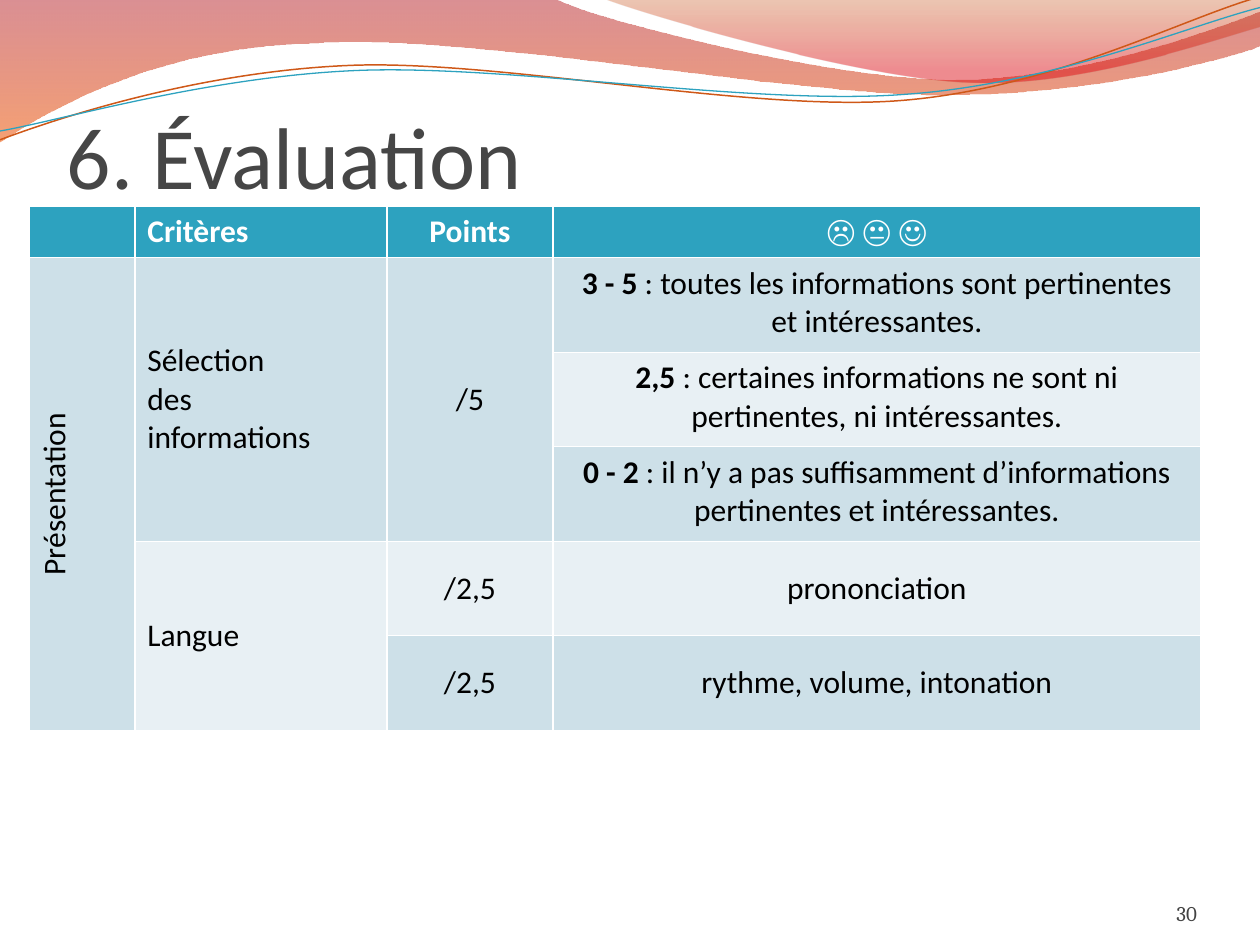
from lxml.etree import SubElement
from pptx import Presentation
from pptx.dml.color import RGBColor
from pptx.enum.text import MSO_ANCHOR, MSO_AUTO_SIZE, PP_ALIGN
from pptx.oxml.ns import qn
from pptx.util import Inches, Pt

COLORS = {
    "white": "FFFFFF", "black": "000000", "title": "464646", "number": "434343",
    "header": "2DA2BF", "band": "CDE0E8", "pale": "E8F0F4", "orange": "CF5818",
    "crimson": "AF0911", "amber": "EE5300", "rust": "C24400", "red": "DC000B",
}
CENTER, LEFT, RIGHT = PP_ALIGN.CENTER, PP_ALIGN.LEFT, PP_ALIGN.RIGHT

# Wave outlines: a two-number item is a corner, a six-number item a Bezier curve
LARGE_WAVE = [
    (0, 0), (4.4, -0.01), (4.76, 0.17, 6.64, 0.63, 7.58, 0.63),
    (8.53, 0.63, 9.58, 0.26, 10, 0.09), (10.01, 0.36),
    (9.83, 0.44, 8.7, 0.76, 7.46, 0.75), (6.22, 0.75, 3.82, 0.28, 2.57, 0.34),
    (1.29, 0.36, 0.46, 0.83, -0.01, 1.13), (0, 0),
]
SMALL_WAVE = [
    (4.79, -0.01), (5.09, 0.11, 6.82, 0.62, 7.69, 0.65),
    (8.56, 0.69, 9.61, 0.32, 10, 0.21), (10, 0), (4.79, -0.01),
]
ORANGE_LINE = [
    (0, 1.11), (0.48, 0.93, 1.58, 0.57, 2.77, 0.52),
    (3.95, 0.47, 5.93, 0.89, 7.13, 0.8), (8.33, 0.71, 9.38, 0.15, 9.98, -0.02),
]
BLUE_LINE = [
    (0, 1.04), (0.47, 0.96, 1.64, 0.61, 2.83, 0.56),
    (4.03, 0.51, 5.97, 0.84, 7.17, 0.75), (8.36, 0.67, 9.41, 0.21, 10, 0.06),
]

# Table content: (row, column, rows spanned, alignment, runs as (text, bold))
COLUMN_WIDTHS = [0.84, 2, 1.32, 5.14]
ROW_HEIGHTS = [0.4] + [0.75] * 5
CELLS = [
    (0, 1, 1, LEFT, [("Critères", True)]),
    (0, 2, 1, CENTER, [("Points", True)]),
    (0, 3, 1, CENTER, [("☹ 😐 ", True), ("☺", True, "Cambria")]),
    (1, 0, 5, CENTER, [("Présentation", False)]),
    (1, 1, 3, LEFT, [("Sélection\ndes\ninformations", False)]),
    (1, 2, 3, CENTER, [("/5", False)]),
    (1, 3, 1, CENTER, [("3 - 5", True), (
        " : toutes les informations sont pertinentes et intéressantes.", False)]),
    (2, 3, 1, CENTER, [("2,5 ", True), (
        ": certaines informations ne sont ni pertinentes, ni intéressantes.", False)]),
    (3, 3, 1, CENTER, [("0 - 2", True), (
        " : il n’y a pas suffisamment d’informations pertinentes et intéressantes.", False)]),
    (4, 1, 2, LEFT, [("Langue", False)]),
    (4, 2, 1, CENTER, [("/2,5", False)]),
    (4, 3, 1, CENTER, [("prononciation", False)]),
    (5, 2, 1, CENTER, [("/2,5", False)]),
    (5, 3, 1, CENTER, [("rythme, volume, intonation", False)]),
]


def color(name):
    return RGBColor.from_string(COLORS[name])


def apply_format(target, values):
    for name, value in values.items():
        setattr(target, name, value)


def add_text(paragraph, text, size, color_name, font="Calibri", bold=False):
    for index, line in enumerate(text.split("\n")):
        if index:
            paragraph.add_line_break()
        run = paragraph.add_run()
        run.text = line
        apply_format(run.font, {"size": Pt(size), "name": font, "bold": bold})
        run.font.color.rgb = color(color_name)


def add_outline(slide, outline, close):
    """Draw through all points, then join each curve's three into one Bezier."""
    points = [(Inches(item[i]), Inches(item[i + 1]))
              for item in outline for i in range(0, len(item), 2)]
    builder = slide.shapes.build_freeform(*points[0])
    builder.add_line_segments(points[1:], close=close)
    shape = builder.convert_to_shape()
    segments = iter(list(shape._element.spPr.iter(qn("a:lnTo"))))
    for item in outline[1:]:
        segment = next(segments)
        if len(item) == 6:
            curve = segment.makeelement(qn("a:cubicBezTo"))
            segment.addprevious(curve)
            for part in (segment, next(segments), next(segments)):
                curve.append(part[0])
                part.getparent().remove(part)
    shape.shadow.inherit = False
    return shape


def add_wave(slide, outline, stops):
    """Filled wave; each stop is (position, color name, opacity in percent)."""
    shape = add_outline(slide, outline, True)
    shape.line.fill.background()
    shape.fill.gradient()
    shape.fill.gradient_angle = 270
    for stop, (position, name, _) in zip(shape.fill.gradient_stops, stops):
        stop.position = position
        stop.color.rgb = color(name)
    elements = list(shape._element.spPr.iter(qn("a:srgbClr")))
    for element, (_, _, opacity) in zip(elements, stops):
        SubElement(element, qn("a:alpha"), val=str(opacity * 1000))


def add_wave_line(slide, outline, color_name, width):
    shape = add_outline(slide, outline, False)
    shape.fill.background()
    shape.line.color.rgb = color(color_name)
    shape.line.width = Pt(width)


def format_title(slide):
    title = slide.shapes.title
    apply_format(title, {"left": Inches(0.53), "top": Inches(0.39),
                         "width": Inches(9), "height": Inches(1.25)})
    frame = title.text_frame
    apply_format(frame, {
        "margin_left": 0, "margin_top": Inches(0.05), "margin_right": 0,
        "margin_bottom": 0, "vertical_anchor": MSO_ANCHOR.BOTTOM,
        "word_wrap": True, "auto_size": MSO_AUTO_SIZE.NONE})
    frame.paragraphs[0].alignment = LEFT
    add_text(frame.paragraphs[0], "6. Évaluation", 50, "title")
    slide.shapes._spTree.append(title._element)  # in front of the waves


def add_criteria_table(slide):
    """The default table style supplies the white borders."""
    table = slide.shapes.add_table(
        len(ROW_HEIGHTS), len(COLUMN_WIDTHS), Inches(0.23), Inches(1.64),
        Inches(sum(COLUMN_WIDTHS)), Inches(sum(ROW_HEIGHTS))).table
    for column, width in zip(table.columns, COLUMN_WIDTHS):
        column.width = Inches(width)
    for index, height in enumerate(ROW_HEIGHTS):
        table.rows[index].height = Inches(height)
        fill_name = "header" if index == 0 else "band" if index % 2 else "pale"
        for cell in table.rows[index].cells:
            cell.fill.solid()
            cell.fill.fore_color.rgb = color(fill_name)
    for row, column, span, alignment, runs in CELLS:
        cell = table.cell(row, column)
        if span > 1:
            cell.merge(table.cell(row + span - 1, column))
        top_aligned = row == 0 or (column == 3 and row < 4)
        cell.vertical_anchor = MSO_ANCHOR.TOP if top_aligned else MSO_ANCHOR.MIDDLE
        paragraph = cell.text_frame.paragraphs[0]
        paragraph.alignment = alignment
        for text, bold, *font in runs:
            add_text(paragraph, text, 18, "black" if row else "white",
                     *font, bold=bold)
    table.cell(1, 0)._tc.get_or_add_tcPr().set("vert", "vert270")


def add_slide_number(slide):
    box = slide.shapes.add_textbox(Inches(8.67), Inches(6.95), Inches(0.83), Inches(0.4))
    frame = box.text_frame
    apply_format(frame, {
        "margin_left": 0, "margin_top": 0, "margin_right": 0, "margin_bottom": 0,
        "vertical_anchor": MSO_ANCHOR.BOTTOM, "word_wrap": True})
    frame.paragraphs[0].alignment = RIGHT
    add_text(frame.paragraphs[0], "30", 12, "number", "Cambria")


def main():
    presentation = Presentation()
    apply_format(presentation, {"slide_width": Inches(10), "slide_height": Inches(7.5)})
    slide = presentation.slides.add_slide(presentation.slide_layouts[5])
    # Decorative waves
    add_wave(slide, LARGE_WAVE, [(0, "crimson", 45), (1, "amber", 55)])
    add_wave(slide, SMALL_WAVE, [(0, "rust", 30), (0.8, "red", 45)])
    add_wave_line(slide, ORANGE_LINE, "orange", 0.85)
    add_wave_line(slide, BLUE_LINE, "header", 0.75)
    # Content
    format_title(slide)
    add_criteria_table(slide)
    add_slide_number(slide)
    presentation.save("out.pptx")


if __name__ == "__main__":
    main()
